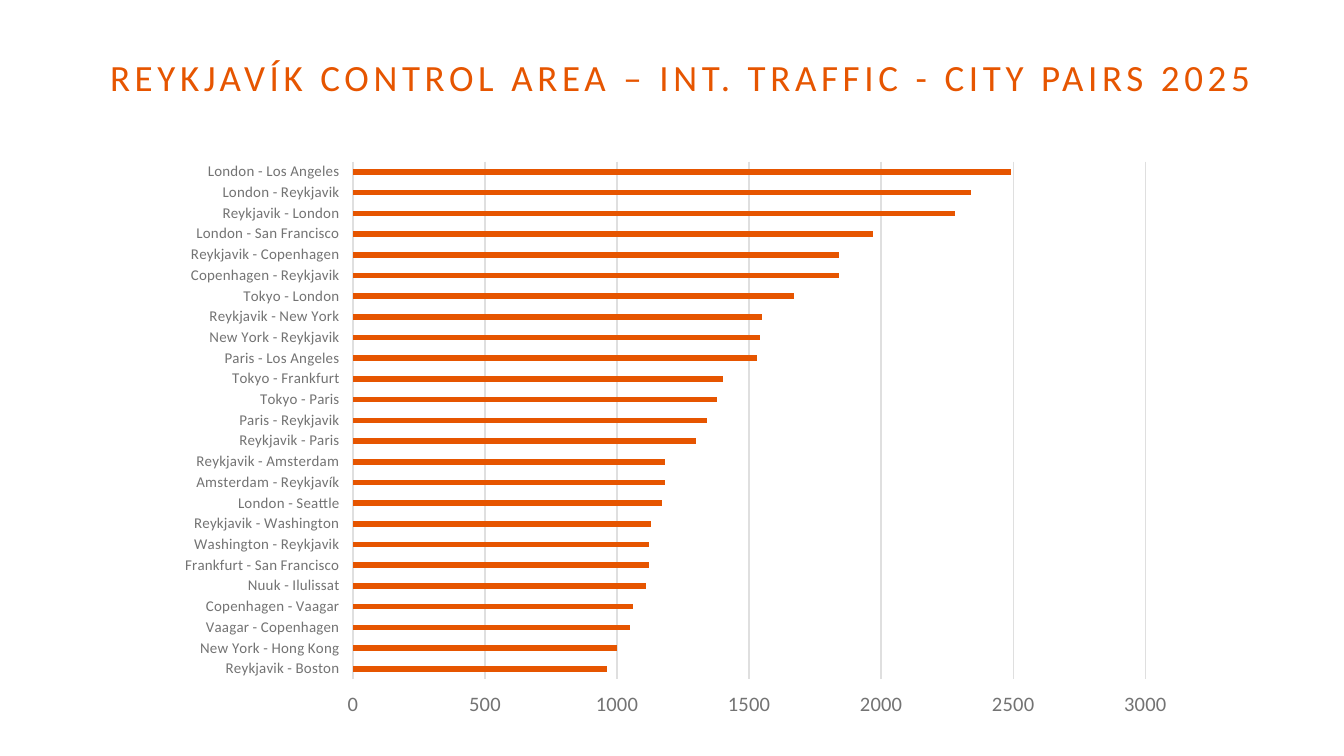
from lxml import etree
from pptx import Presentation
from pptx.chart.data import CategoryChartData
from pptx.dml.color import RGBColor
from pptx.enum.chart import XL_CHART_TYPE, XL_TICK_LABEL_POSITION, XL_TICK_MARK
from pptx.enum.text import MSO_ANCHOR, MSO_AUTO_SIZE, PP_ALIGN
from pptx.oxml.ns import qn
from pptx.util import Pt

BAR_CLUSTERED = XL_CHART_TYPE.BAR_CLUSTERED
NO_TICK = XL_TICK_MARK.NONE
LABELS_LOW = XL_TICK_LABEL_POSITION.LOW
MIDDLE = MSO_ANCHOR.MIDDLE
NO_AUTOFIT = MSO_AUTO_SIZE.NONE
LEFT = PP_ALIGN.LEFT

PX = 914400 / 134.4
FONT = "Calibri"
COLORS = {"orange": "E65500", "text": "272727", "label": "737373", "grid": "DFDFDF"}
PLOT = {"x": 0.221, "y": 0.023, "w": 0.742, "h": 0.873}

# Flights per city pair, busiest first
CITY_PAIRS = [
    ("London - Los Angeles", 2490),
    ("London - Reykjavik", 2340),
    ("Reykjavik - London", 2280),
    ("London - San Francisco", 1970),
    ("Reykjavik - Copenhagen", 1840),
    ("Copenhagen - Reykjavik", 1840),
    ("Tokyo - London", 1670),
    ("Reykjavik - New York", 1550),
    ("New York - Reykjavik", 1540),
    ("Paris - Los Angeles", 1530),
    ("Tokyo - Frankfurt", 1400),
    ("Tokyo - Paris", 1380),
    ("Paris - Reykjavik", 1340),
    ("Reykjavik - Paris", 1300),
    ("Reykjavik - Amsterdam", 1180),
    ("Amsterdam - Reykjavík", 1180),
    ("London - Seattle", 1170),
    ("Reykjavik - Washington", 1130),
    ("Washington - Reykjavik", 1120),
    ("Frankfurt - San Francisco", 1120),
    ("Nuuk - Ilulissat", 1110),
    ("Copenhagen - Vaagar", 1060),
    ("Vaagar - Copenhagen", 1050),
    ("New York - Hong Kong", 1000),
    ("Reykjavik - Boston", 960),
]


def px(*lengths):
    return [round(length * PX) for length in lengths]


def rgb(name):
    return RGBColor.from_string(COLORS[name])


def apply(target, values):
    for attribute, value in values.items():
        setattr(target, attribute, value)


def set_font(font, size, color):
    apply(font, {"name": FONT, "size": Pt(size), "bold": False})
    font.color.rgb = rgb(color)


def set_line(line, color):
    line.width = Pt(0.75)
    line.color.rgb = rgb(color)


def add_title(slide, wording, box):
    title = slide.shapes.title
    apply(title, dict(zip(("left", "top", "width", "height"), px(*box))))
    frame = title.text_frame
    apply(frame, {"margin_left": 0, "margin_top": 0, "margin_right": 0,
                  "margin_bottom": 0, "vertical_anchor": MIDDLE,
                  "word_wrap": True, "auto_size": NO_AUTOFIT})
    heading = frame.paragraphs[0]
    apply(heading, {"alignment": LEFT, "line_spacing": Pt(26)})
    run = heading.add_run()
    run.text = wording
    set_font(run.font, 19.8, "orange")
    run.font._element.set("spc", "250")


def place_plot(chart):
    """Fix the inner plot area as fractions of the chart."""
    plot_area = chart._chartSpace.chart.plotArea
    for old in plot_area.findall(qn("c:layout")):
        plot_area.remove(old)
    layout = etree.Element(qn("c:layout"))
    manual = etree.SubElement(layout, qn("c:manualLayout"))
    settings = {"layoutTarget": "inner", "xMode": "edge", "yMode": "edge", **PLOT}
    for tag, value in settings.items():
        etree.SubElement(manual, qn(f"c:{tag}")).set("val", str(value))
    plot_area.insert(0, layout)


def format_axis(axis, size):
    apply(axis, {"major_tick_mark": NO_TICK, "minor_tick_mark": NO_TICK,
                 "tick_label_position": LABELS_LOW})
    set_font(axis.tick_labels.font, size, "label")


def add_bar_chart(slide, pairs, box):
    data = CategoryChartData(number_format="General")
    cities, flights = zip(*reversed(pairs))  # bars are stacked from the bottom up
    data.categories = cities
    data.add_series("Series 1", flights)
    chart = slide.shapes.add_chart(BAR_CLUSTERED, *px(*box), data).chart
    apply(chart, {"has_title": False, "has_legend": False})
    set_font(chart.font, 10, "text")
    place_plot(chart)

    # Bars
    bars = chart.plots[0]
    apply(bars, {"gap_width": 269, "overlap": 2, "vary_by_categories": False})
    fill = bars.series[0].format.fill
    fill.solid()
    fill.fore_color.rgb = rgb("orange")

    # Axes
    format_axis(chart.category_axis, 8)
    set_line(chart.category_axis.format.line, "grid")
    flights_axis = chart.value_axis
    format_axis(flights_axis, 11)
    apply(flights_axis, {"minimum_scale": 0, "maximum_scale": 3000,
                         "major_unit": 500, "has_major_gridlines": True})
    flights_axis.format.line.fill.background()
    set_line(flights_axis.major_gridlines.format.line, "grid")


def main():
    deck = Presentation()
    deck.slide_width, deck.slide_height = px(1344, 756)
    slide = deck.slides.add_slide(deck.slide_layouts[5])
    add_title(slide, "REYKJAVÍK CONTROL AREA – INT. TRAFFIC - CITY PAIRS 2025",
              (110, 30, 1173, 90))
    add_bar_chart(slide, CITY_PAIRS, (117, 148, 1068, 593))
    deck.save("out.pptx")


if __name__ == "__main__":
    main()
